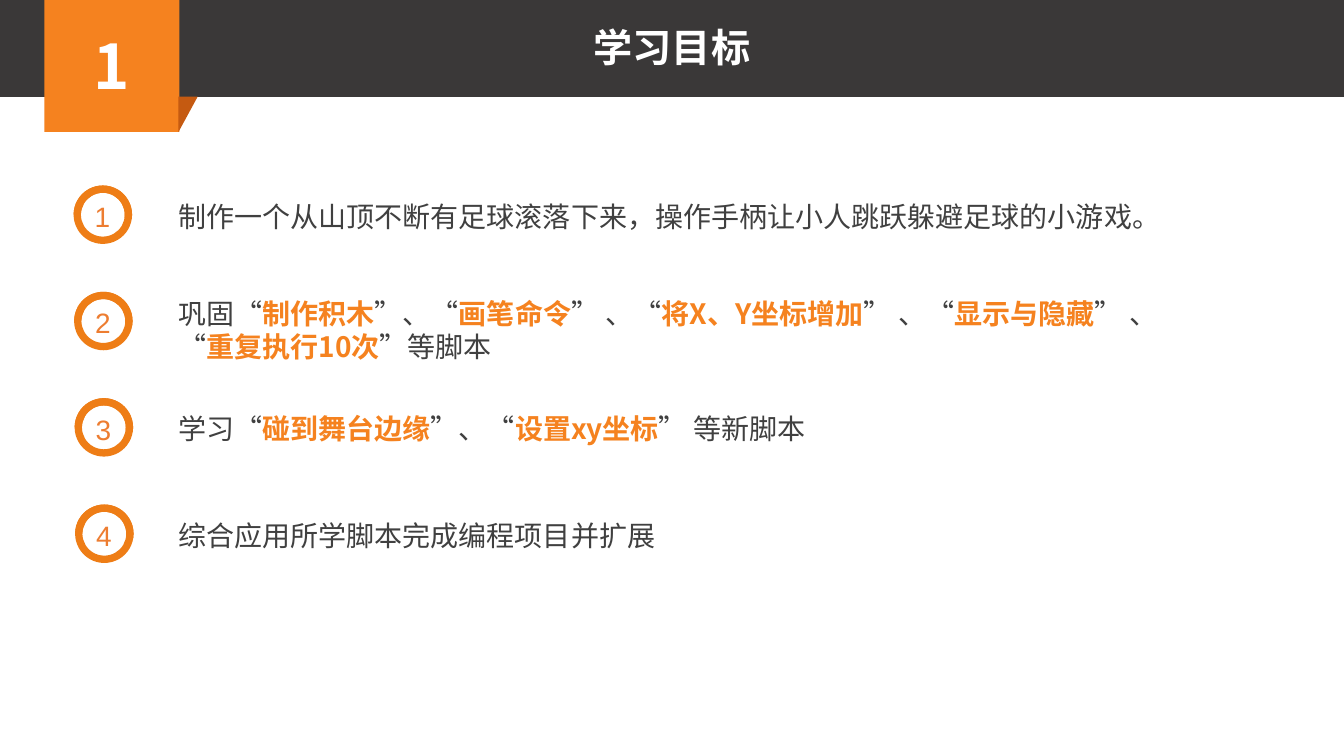
from lxml import etree
from pptx import Presentation
from pptx.dml.color import RGBColor
from pptx.enum.lang import MSO_LANGUAGE_ID as Lang
from pptx.enum.shapes import MSO_SHAPE as Preset
from pptx.enum.text import MSO_ANCHOR as Anchor, MSO_AUTO_SIZE as AutoSize, PP_ALIGN as Align
from pptx.oxml.ns import qn
from pptx.util import Inches, Pt

CJK = "Noto Sans CJK SC"
ORANGE, RING, NUMBER = "F5821F", "EE7D16", "ED7D31"
DARK, FOLD, BODY, WHITE = "3A3838", "C55A11", "404040", "FFFFFF"

# Each goal: text box top, width, height and wording; | switches emphasis on and off
GOALS = [
    (1.93, 9.98, 0.44, "制作一个从山顶不断有足球滚落下来，操作手柄让小人跳跃躲避足球的小游戏。"),
    (2.89, 9.65, 0.77, "巩固“|制作积木|”、“|画笔命令|” 、“|将X、Y坐标增加|” 、“|显示与隐藏|” 、“|重复执行10次|”等脚本"),
    (4.03, 9.65, 0.44, "学习“|碰到舞台边缘|”、“|设置xy坐标|” 等新脚本"),
    (5.09, 9.65, 0.44, "综合应用所学脚本完成编程项目并扩展"),
]


def rgb(value):
    return RGBColor.from_string(value)


def add_filled(shapes, preset, box, color, adjustments=()):
    shape = shapes.add_shape(preset, *map(Inches, box))
    shape.shadow.inherit = False
    shape.fill.solid()
    shape.fill.fore_color.rgb = rgb(color)
    shape.line.fill.background()
    for i, value in enumerate(adjustments):
        shape.adjustments[i] = value
    return shape


def write_run(paragraph, text, color, size, name=CJK, bold=False):
    run = paragraph.add_run()
    run.text = text
    formats = {"size": Pt(size), "name": name, "bold": bold,
               "language_id": Lang.SIMPLIFIED_CHINESE}
    for attribute, value in formats.items():
        setattr(run.font, attribute, value)
    run.font.color.rgb = rgb(color)
    # East Asian typeface
    etree.SubElement(run.font._element, qn("a:ea")).set("typeface", name)


def add_text(shapes, box, wrap=True):
    frame = shapes.add_textbox(*map(Inches, box)).text_frame
    frame.word_wrap = wrap
    frame.auto_size = AutoSize.SHAPE_TO_FIT_TEXT
    return frame.paragraphs[0]


def add_header(shapes, left, top, width, height, number, title):
    # Dark band
    add_filled(shapes, Preset.RECTANGLE, (left, top, width, height), DARK)

    # Section tab with its folded corner
    side = 1.34
    tab = add_filled(shapes, Preset.RECTANGLE, (left + 0.44, top, side, side), ORANGE)
    tab.text_frame.vertical_anchor = Anchor.MIDDLE
    section = tab.text_frame.paragraphs[0]
    section.alignment = Align.CENTER
    write_run(section, number, WHITE, 44, bold=True)
    fold = add_filled(shapes, Preset.RIGHT_TRIANGLE,
                      (left + 1.77, top + height, 0.19, side - height), FOLD)
    fold._element.spPr.find(qn("a:xfrm")).set("flipV", "1")

    # Title
    heading = add_text(shapes, (left + (width - 4.37) / 2, top + 0.21, 4.37, 0.57))
    heading.alignment = Align.CENTER
    write_run(heading, title, WHITE, 28, bold=True)


def add_badge(shapes, left, top, side, number):
    badge = shapes.add_group_shape().shapes
    ring = (left, top, side, side)
    add_filled(badge, Preset.DONUT, ring, RING, [0.125])
    add_filled(badge, Preset.BLOCK_ARC, ring, RING, [107.952, 5.13, 0.125])
    digit = add_text(badge, (left + 0.11, top + 0.09, 0.36, 0.44), wrap=False)
    write_run(digit, str(number), NUMBER, 20, name="Arial")


def add_goals(shapes, left, top, pitch):
    for i, (text_top, width, height, wording) in enumerate(GOALS):
        add_badge(shapes, left + 0.005 * i, top + pitch * i, 0.58, i + 1)
        goal = add_text(shapes, (left + 0.94, text_top, width, height))
        for j, part in enumerate(wording.split("|")):
            strong = j % 2 == 1
            write_run(goal, part, ORANGE if strong else BODY, 20, bold=strong)


def main():
    deck = Presentation()
    deck.slide_width, deck.slide_height = Inches(13.33), Inches(7.5)
    shapes = deck.slides.add_slide(deck.slide_layouts[6]).shapes
    add_header(shapes, 0, -0.03, 13.33, 0.99, "1", "学习目标")
    add_goals(shapes, 0.73, 1.84, 1.055)
    deck.save("out.pptx")


if __name__ == "__main__":
    main()
